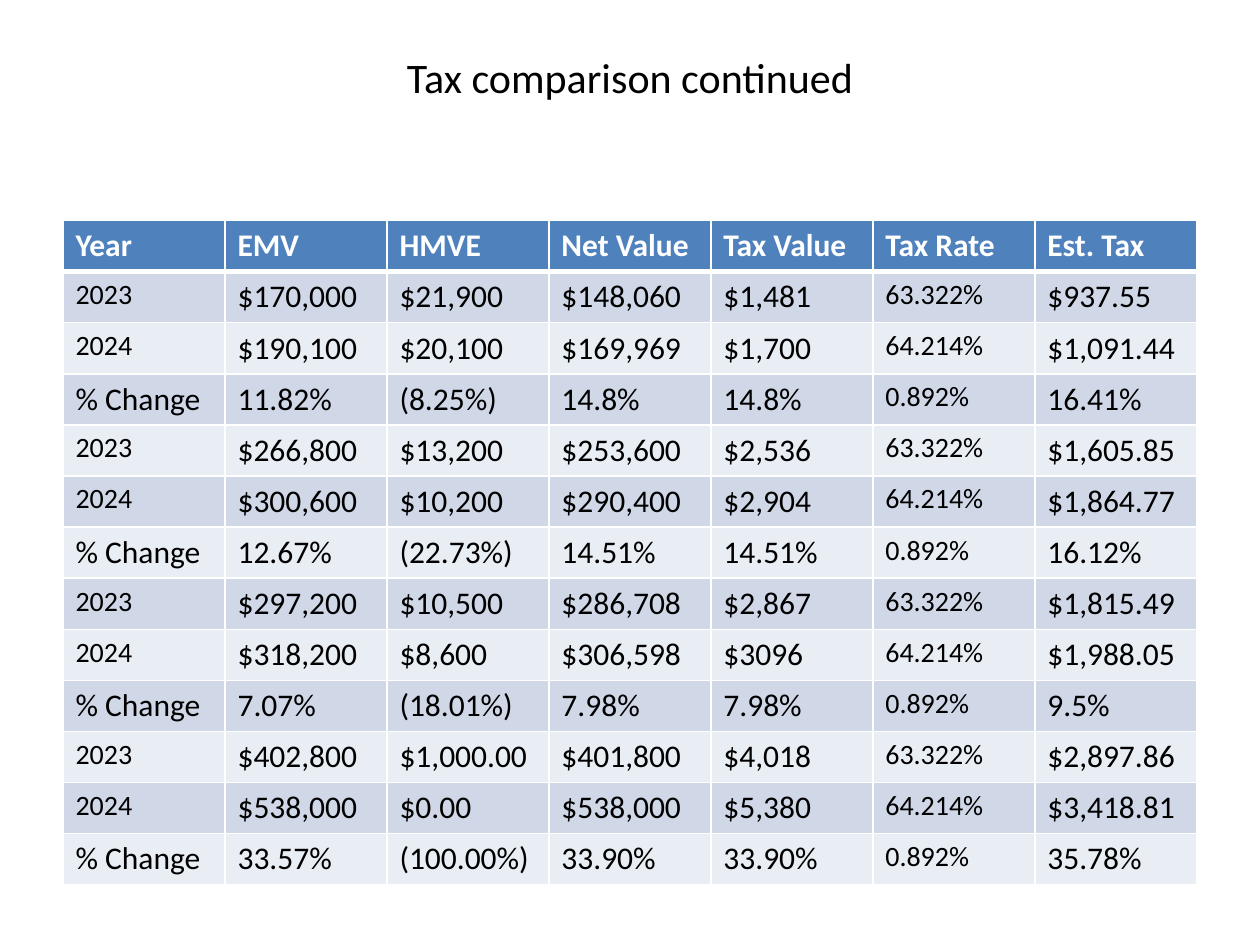
from lxml.etree import SubElement
from pptx import Presentation
from pptx.dml.color import RGBColor
from pptx.enum.text import MSO_ANCHOR as Anchor, PP_ALIGN as Align
from pptx.oxml.ns import qn
from pptx.util import Pt

FONT = "Calibri"
BLACK, WHITE = "000000", "FFFFFF"
HEADER_BLUE = "4F81BD"
BAND_FILLS = ("D0D8E8", "E9EDF4")
TITLE_ONLY_LAYOUT = 5
COLUMN_WIDTH = 648 / 7
ROW_HEIGHT = 29.2
TAX_RATE_COLUMN = 5

HEADERS = ("Year", "EMV", "HMVE", "Net Value", "Tax Value", "Tax Rate", "Est. Tax")
# Label and tax rate of the three rows that each property takes
PERIODS = (("2023", "63.322%"), ("2024", "64.214%"), ("% Change", "0.892%"))
# EMV, HMVE, net value, tax value and estimated tax for each period
PROPERTIES = (
    (("$170,000", "$21,900", "$148,060", "$1,481", "$937.55"),
     ("$190,100", "$20,100", "$169,969", "$1,700", "$1,091.44"),
     ("11.82%", "(8.25%)", "14.8%", "14.8%", "16.41%")),
    (("$266,800", "$13,200", "$253,600", "$2,536", "$1,605.85"),
     ("$300,600", "$10,200", "$290,400", "$2,904", "$1,864.77"),
     ("12.67%", "(22.73%)", "14.51%", "14.51%", "16.12%")),
    (("$297,200", "$10,500", "$286,708", "$2,867", "$1,815.49"),
     ("$318,200", "$8,600", "$306,598", "$3096", "$1,988.05"),
     ("7.07%", "(18.01%)", "7.98%", "7.98%", "9.5%")),
    (("$402,800", "$1,000.00", "$401,800", "$4,018", "$2,897.86"),
     ("$538,000", "$0.00", "$538,000", "$5,380", "$3,418.81"),
     ("33.57%", "(100.00%)", "33.90%", "33.90%", "35.78%")),
)


def color(hex_string):
    return RGBColor.from_string(hex_string)


def add_run(paragraph, text, size, text_color, bold=False):
    run = paragraph.add_run()
    run.text = text
    run.font.name = FONT
    run.font.size = Pt(size)
    run.font.bold = bold
    run.font.color.rgb = color(text_color)


def add_title(slide, text):
    title = slide.shapes.title
    title.left, title.top, title.width, title.height = Pt(36), Pt(21.6), Pt(648), Pt(44.6)
    title.text_frame.vertical_anchor = Anchor.MIDDLE
    paragraph = title.text_frame.paragraphs[0]
    paragraph.alignment = Align.CENTER
    add_run(paragraph, text, 24, BLACK)


def set_borders(cell, bottom=1, top=1):
    properties = cell._tc.get_or_add_tcPr()
    for tag, width in (("a:lnL", 1), ("a:lnR", 1), ("a:lnT", top), ("a:lnB", bottom)):
        line = SubElement(properties, qn(tag), w=str(Pt(width)))
        fill = SubElement(line, qn("a:solidFill"))
        SubElement(fill, qn("a:srgbClr"), val=WHITE)


def fill_cell(cell, text, size, text_color, background, bold=False):
    cell.fill.solid()
    cell.fill.fore_color.rgb = color(background)
    add_run(cell.text_frame.paragraphs[0], text, size, text_color, bold)


def tax_rows():
    """Return the body rows, with the period label and tax rate put in place."""
    return [
        (label, *values[:-1], rate, values[-1])
        for periods in PROPERTIES
        for (label, rate), values in zip(PERIODS, periods)
    ]


def body_size(column, text):
    is_year = column == 0 and text.isdigit()
    return 16 if is_year or column == TAX_RATE_COLUMN else 18


def add_tax_table(slide):
    rows = tax_rows()
    row_count = len(rows) + 1
    frame = slide.shapes.add_table(
        row_count, len(HEADERS), Pt(36), Pt(126), Pt(648), Pt(ROW_HEIGHT * row_count))
    table = frame.table
    for column in table.columns:
        column.width = Pt(COLUMN_WIDTH)
    for row in table.rows:
        row.height = Pt(ROW_HEIGHT)

    for column, text in enumerate(HEADERS):
        cell = table.cell(0, column)
        set_borders(cell, bottom=3)
        fill_cell(cell, text, 18, WHITE, HEADER_BLUE, bold=True)
    for index, values in enumerate(rows):
        for column, text in enumerate(values):
            cell = table.cell(index + 1, column)
            set_borders(cell, top=3 if index == 0 else 1)
            fill_cell(cell, text, body_size(column, text), BLACK, BAND_FILLS[index % 2])


def main():
    presentation = Presentation()
    presentation.slide_width, presentation.slide_height = Pt(720), Pt(540)
    slide = presentation.slides.add_slide(presentation.slide_layouts[TITLE_ONLY_LAYOUT])
    add_title(slide, "Tax comparison continued")
    add_tax_table(slide)
    presentation.save("out.pptx")


if __name__ == "__main__":
    main()
